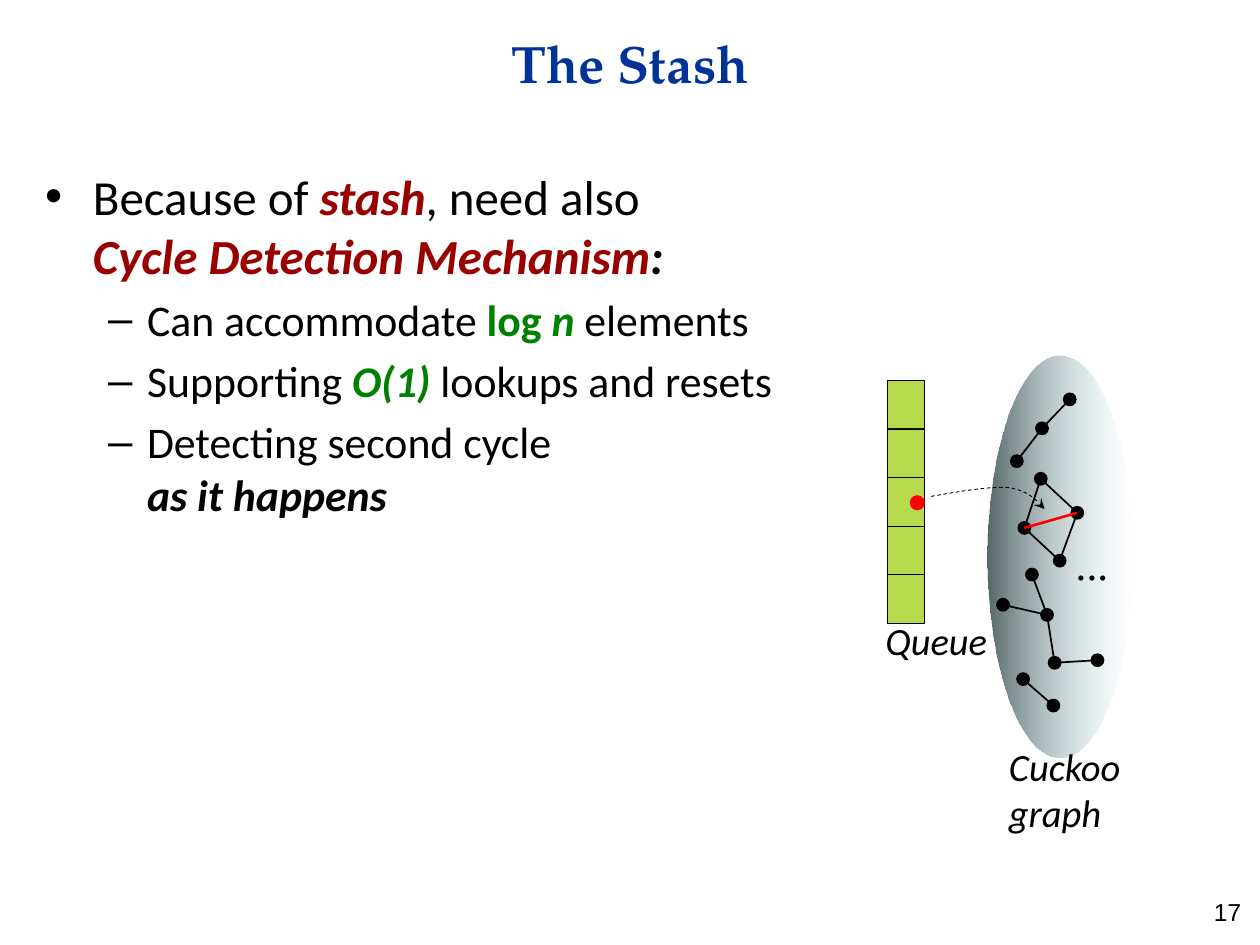
"""Build the slide about the stash, its queue and the cuckoo graph."""
from dataclasses import dataclass

from lxml import etree
from pptx import Presentation
from pptx.dml.color import RGBColor
from pptx.enum.dml import MSO_LINE
from pptx.enum.shapes import MSO_CONNECTOR, MSO_SHAPE
from pptx.enum.text import MSO_ANCHOR, PP_ALIGN
from pptx.oxml.ns import qn
from pptx.util import Inches, Pt

OVAL, RECTANGLE = MSO_SHAPE.OVAL, MSO_SHAPE.RECTANGLE
LEFT, CENTER, RIGHT = PP_ALIGN.LEFT, PP_ALIGN.CENTER, PP_ALIGN.RIGHT
MIDDLE = MSO_ANCHOR.MIDDLE
STRAIGHT = MSO_CONNECTOR.STRAIGHT
DASH = MSO_LINE.DASH
BLACK, RED, DARK_RED, GREEN, BLUE = "000000", "FF0000", "990000", "008000", "003399"
LINE_BREAK = "\v"


@dataclass
class Span:
    text: str
    color: str = BLACK
    bold: bool = False
    italic: bool = False


@dataclass
class Bullet:
    level: int
    spans: list[Span]


@dataclass
class Level:
    mark: str
    size: float
    margin: float
    hanging: float


@dataclass
class Label:
    text: str
    left: float
    top: float
    width: float
    height: float
    size: float = 22
    font: str = "Calibri"
    align: PP_ALIGN = CENTER
    italic: bool = True


@dataclass
class Component:
    vertices: list[tuple[float, float]]
    edges: list[tuple[int, int]]


LEVELS = [Level("•", 28, 0.38, 0.38), Level("–", 25, 0.81, 0.31)]
BULLETS = [
    Bullet(0, [Span("Because of "), Span("stash", DARK_RED, True, True),
               Span(", need also "), Span(LINE_BREAK),
               Span("Cycle Detection Mechanism", DARK_RED, True, True),
               Span(":", BLACK, True, True)]),
    Bullet(1, [Span("Can accommodate "), Span("log", GREEN, True),
               Span(" n", GREEN, True, True), Span(" elements")]),
    Bullet(1, [Span("Supporting "), Span("O(1)", GREEN, True, True),
               Span(" lookups and resets")]),
    Bullet(1, [Span("Detecting second cycle "), Span(LINE_BREAK),
               Span("as it happens", BLACK, True, True)]),
]
LABELS = [
    Label("Queue", 6.8, 4.85, 1.26, 0.47),
    Label("Cuckoo\ngraph", 7.91, 5.85, 1.36, 0.83, align=LEFT),
    Label("...", 8.39, 4.21, 0.57, 0.52, 25, "Times New Roman"),
    Label("17", 7.62, 7.07, 2.33, 0.28, 14, "Arial", RIGHT, False),
]
SQUARE = [(8.26, 3.8), (8.55, 4.07), (8.41, 4.45), (8.13, 4.19)]
COMPONENTS = [
    Component([(8.31, 4.88), (7.96, 4.8), (8.19, 4.56), (8.37, 5.26), (8.71, 5.24)],
              [(0, 1), (2, 0), (0, 3), (4, 3)]),
    Component([(8.07, 3.66), (8.27, 3.4), (8.49, 3.17)], [(0, 1), (1, 2)]),
    Component([(8.12, 5.39), (8.36, 5.6)], [(0, 1)]),
    Component(SQUARE, [(0, 1), (1, 2), (2, 3), (3, 0)]),
]
QUEUE_CELLS, CELL_WIDTH, CELL_HEIGHT = 5, 0.3, 0.385
ARROW_CURVES = [
    [(7.39, 3.94), (7.62, 3.9), (7.85, 3.86), (8, 3.87)],
    [(8, 3.87), (8.15, 3.89), (8.22, 3.96), (8.29, 4.04)],
]
CURVE_STEPS = 10


def rgb(value: str) -> RGBColor:
    return RGBColor.from_string(value)


def set_alpha(container, percent: int) -> None:
    color = next(container.iter(qn("a:srgbClr")))
    etree.SubElement(color, qn("a:alpha")).set("val", str(percent * 1000))


def format_span(span, size: float, font: str, color: str, bold: bool, italic: bool) -> None:
    span.font.size, span.font.name = Pt(size), font
    span.font.bold, span.font.italic = bold, italic
    span.font.color.rgb = rgb(color)


def add_shape(page, kind, left: float, top: float, width: float, height: float):
    shape = page.shapes.add_shape(kind, Inches(left), Inches(top), Inches(width), Inches(height))
    shape.shadow.inherit = False
    shape.line.fill.background()
    return shape


def add_dot(page, center: tuple[float, float], size: float, color: str) -> None:
    x, y = center
    dot = add_shape(page, OVAL, x - size / 2, y - size / 2, size, size)
    dot.fill.solid()
    dot.fill.fore_color.rgb = rgb(color)


def add_edge(page, start: tuple[float, float], end: tuple[float, float],
             color: str = BLACK, width: float = 1) -> None:
    edge = page.shapes.add_connector(STRAIGHT, *map(Inches, start + end))
    edge.line.color.rgb, edge.line.width = rgb(color), Pt(width)
    etree.SubElement(edge._element.spPr, qn("a:effectLst"))


def add_text_box(page, left: float, top: float, width: float, height: float):
    box = page.shapes.add_textbox(Inches(left), Inches(top), Inches(width), Inches(height))
    box.text_frame.word_wrap = True
    return box.text_frame


def add_label(page, label: Label) -> None:
    frame = add_text_box(page, label.left, label.top, label.width, label.height)
    frame.text = label.text
    for para in frame.paragraphs:
        para.alignment = label.align
        format_span(para.runs[0], label.size, label.font, BLACK, False, label.italic)


def add_title(page, text: str) -> None:
    title = page.shapes.title
    title.left, title.top = Inches(0), Inches(0.08)
    title.width, title.height = Inches(10), Inches(0.83)
    title.text_frame.text = text
    title.text_frame.vertical_anchor = MIDDLE
    para = title.text_frame.paragraphs[0]
    para.alignment = CENTER
    format_span(para.runs[0], 30, "TeX Gyre Pagella", BLUE, True, False)


def add_bullets(page, bullets: list[Bullet]) -> None:
    frame = add_text_box(page, 0.26, 1.27, 9.74, 4.56)
    for index, bullet in enumerate(bullets):
        para = frame.add_paragraph() if index else frame.paragraphs[0]
        level = LEVELS[bullet.level]
        para.level, para.space_before = bullet.level, Pt(level.size * 0.2)
        properties = para._p.get_or_add_pPr()
        properties.set("marL", str(Inches(level.margin)))
        properties.set("indent", str(-Inches(level.hanging)))
        etree.SubElement(properties, qn("a:buFont")).set("typeface", "Arial")
        etree.SubElement(properties, qn("a:buChar")).set("char", level.mark)
        for part in bullet.spans:
            if part.text == LINE_BREAK:
                para.add_line_break()
                continue
            span = para.add_run()
            span.text = part.text
            format_span(span, level.size, "Calibri", part.color, part.bold, part.italic)


def add_queue(page) -> None:
    for row in range(QUEUE_CELLS):
        cell = add_shape(page, RECTANGLE, 7.04, 3.02 + row * CELL_HEIGHT, CELL_WIDTH, CELL_HEIGHT)
        cell.fill.solid()
        cell.fill.fore_color.rgb = rgb("99CC00")
        set_alpha(cell._element.spPr, 70)
        cell.line.color.rgb, cell.line.width = rgb(BLACK), Pt(0.5)


def add_graph(page) -> None:
    cloud = add_shape(page, OVAL, 6.82, 3.84, 3.19, 1.15)
    cloud.rotation = 90
    cloud.fill.gradient()
    cloud.fill.gradient_angle = 270
    for stop, color in zip(cloud.fill.gradient_stops, ("BBE0E3", "576869")):
        stop.color.rgb = rgb(color)
    set_alpha(cloud._element.spPr, 0)
    for component in COMPONENTS:
        for center in component.vertices:
            add_dot(page, center, 0.11, BLACK)
        for start, end in component.edges:
            add_edge(page, component.vertices[start], component.vertices[end])


def curve_point(controls: list[tuple[float, float]], t: float) -> tuple[int, int]:
    weights = ((1 - t) ** 3, 3 * t * (1 - t) ** 2, 3 * t ** 2 * (1 - t), t ** 3)
    x, y = (sum(w * c for w, c in zip(weights, axis)) for axis in zip(*controls))
    return Inches(x), Inches(y)


def add_curved_arrow(page) -> None:
    points = [curve_point(controls, step / CURVE_STEPS)
              for controls in ARROW_CURVES for step in range(CURVE_STEPS + 1)]
    builder = page.shapes.build_freeform(*points[0])
    builder.add_line_segments(points[1:], close=False)
    arrow = builder.convert_to_shape()
    arrow.shadow.inherit = False
    arrow.fill.background()
    arrow.line.color.rgb, arrow.line.width = rgb(BLACK), Pt(0.5)
    arrow.line.dash_style = DASH
    etree.SubElement(arrow.line._get_or_add_ln(), qn("a:tailEnd")).set("type", "stealth")


def main() -> None:
    deck = Presentation()
    deck.slide_width, deck.slide_height = Inches(10), Inches(7.5)
    page = deck.slides.add_slide(deck.slide_layouts[5])
    add_title(page, "The Stash")
    add_queue(page)
    add_graph(page)
    for label in LABELS:
        add_label(page, label)
    add_curved_arrow(page)
    add_edge(page, SQUARE[3], SQUARE[1], RED, 1.5)
    add_dot(page, (7.28, 3.99), 0.12, RED)
    add_bullets(page, BULLETS)
    deck.save("out.pptx")


if __name__ == "__main__":
    main()
